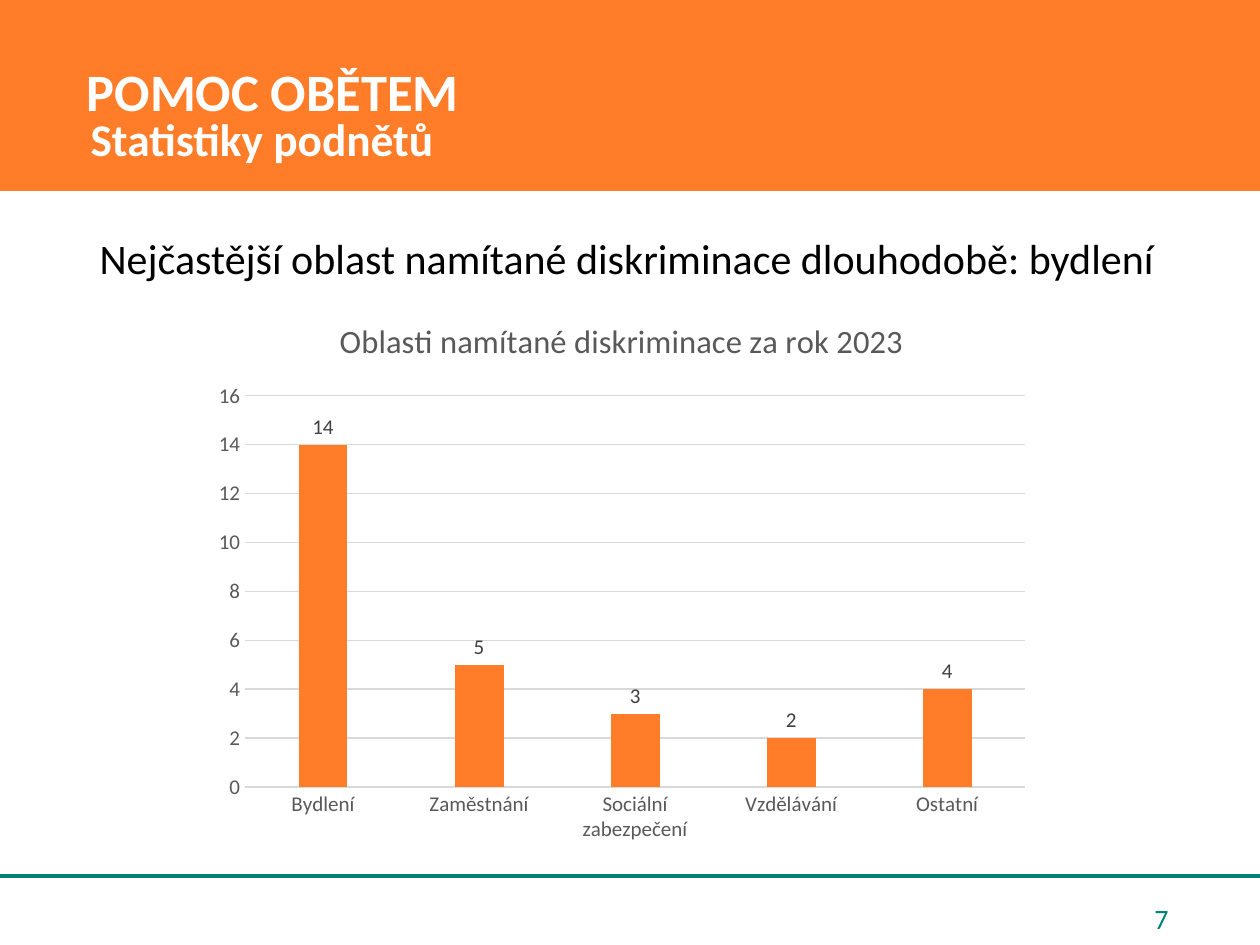
from lxml.etree import SubElement
from pptx import Presentation
from pptx.chart.data import CategoryChartData as ChartData
from pptx.dml.color import RGBColor as RGB
from pptx.enum.chart import XL_CHART_TYPE as Kind, XL_LABEL_POSITION as Spot
from pptx.enum.chart import XL_TICK_MARK as Tick
from pptx.enum.shapes import MSO_CONNECTOR as Conn, MSO_SHAPE as Shape
from pptx.enum.text import MSO_ANCHOR as Anchor, MSO_AUTO_SIZE as Fit, PP_ALIGN as Align
from pptx.oxml.ns import qn
from pptx.util import Emu, Pt

SCALE = 914400 / 126
FACE = "Calibri"
COLORS = {
    "orange": "FF7D28", "teal": "008276", "white": "FFFFFF", "black": "000000",
    "grey": "595959", "dark": "404040", "rule": "D9D9D9",
}


def px(*nums):
    return [Emu(round(n * SCALE)) for n in nums]


def tint(name):
    return RGB.from_string(COLORS[name])


class Deck:
    """Holds the style and the current slide."""

    def __init__(self, wide, high):
        self.prs = Presentation()
        self.prs.slide_width, self.prs.slide_height = px(wide, high)
        self.slide = self.prs.slides.add_slide(self.prs.slide_layouts[3])
        self.shapes = self.slide.shapes

    def font(self, font, size, color, bold=False):
        look = {"name": FACE, "size": Pt(size), "bold": bold}
        for key, value in look.items():
            setattr(font, key, value)
        font.color.rgb = tint(color)

    def stroke(self, line, color, width):
        line.color.rgb = tint(color)
        line.width = Pt(width)

    def band(self, box, color):
        """Draws a filled strip behind everything else."""
        band = self.shapes.add_shape(Shape.RECTANGLE, *px(*box))
        band.shadow.inherit = False
        band.fill.solid()
        band.fill.fore_color.rgb = tint(color)
        self.stroke(band.line, color, 1)
        self.shapes.element.insert(2, band.element)

    def rule(self, ends, color, width):
        rule = self.shapes.add_connector(Conn.STRAIGHT, *px(*ends))
        self.stroke(rule.line, color, width)
        SubElement(rule.element.spPr, qn("a:effectLst"))

    def text(self, shape, box, words, size, color, bold=False, indent=0,
             space=1.0, align=Align.LEFT, anchor=Anchor.TOP):
        shape.left, shape.top, shape.width, shape.height = px(*box)
        frame = shape.text_frame
        frame.text = words
        look = {"word_wrap": True, "auto_size": Fit.NONE, "vertical_anchor": anchor}
        for key, value in look.items():
            setattr(frame, key, value)
        par = frame.paragraphs[0]
        props = par._p.get_or_add_pPr()
        props.set("marL", str(px(indent)[0]))
        props.set("indent", "0")
        SubElement(props, qn("a:buNone"))
        look = {"alignment": align, "line_spacing": space, "space_before": Pt(0)}
        for key, value in look.items():
            setattr(par, key, value)
        self.font(par.runs[0].font, size, color, bold)

    def note(self, box, *args, **style):
        self.text(self.shapes.add_textbox(*px(*box)), box, *args, **style)

    def chart(self, box, title, rows, color):
        data = ChartData(number_format="0")
        data.categories = list(rows)
        data.add_series(title, list(rows.values()))
        chart = self.shapes.add_chart(Kind.COLUMN_CLUSTERED, *px(*box), data).chart
        self.font(chart.font, 10, "black")
        chart.has_legend = False
        chart.has_title = True
        frame = chart.chart_title.text_frame
        frame.text = title
        self.font(frame.paragraphs[0].runs[0].font, 18.6, "grey")
        chart.chart_title.include_in_layout = False

        cats, vals = chart.category_axis, chart.value_axis
        for axis in (cats, vals):
            axis.major_tick_mark = axis.minor_tick_mark = Tick.NONE
            self.font(axis.tick_labels.font, 12, "grey")
        self.stroke(cats.format.line, "rule", 0.75)
        vals.format.line.fill.background()
        self.stroke(vals.major_gridlines.format.line, "rule", 0.75)
        for key, value in {"minimum_scale": 0, "maximum_scale": 16, "major_unit": 2}.items():
            setattr(vals, key, value)

        plot = chart.plots[0]
        look = {"gap_width": 219, "overlap": -27, "vary_by_categories": False,
                "has_data_labels": True}
        for key, value in look.items():
            setattr(plot, key, value)
        labels = plot.data_labels
        labels.show_value = True
        labels.position = Spot.OUTSIDE_END
        self.font(labels.font, 12, "dark")
        fill = plot.series[0].format.fill
        fill.solid()
        fill.fore_color.rgb = tint(color)


def main():
    deck = Deck(1260, 945)
    title, sub, lead = deck.slide.placeholders
    deck.band((0, 0, 1265, 190), "orange")
    deck.rule((-4, 876, 1265, 876), "teal", 2.25)
    deck.text(title, (0, 0, 1260, 190), "POMOC OBĚTEM", 30, "white", bold=True,
              indent=74, space=0.9, anchor=Anchor.MIDDLE)
    deck.text(sub, (78, 120, 755, 55), "Statistiky podnětů", 25.9, "white",
              bold=True, space=0.7)
    deck.text(lead, (87, 232, 1095, 79),
              "Nejčastější oblast namítané diskriminace dlouhodobě: bydlení",
              24, "black", space=0.9)
    deck.chart((202, 294, 840, 559), "Oblasti namítané diskriminace za rok 2023",
               {"Bydlení": 14, "Zaměstnání": 5, "Sociální zabezpečení": 3,
                "Vzdělávání": 2, "Ostatní": 4}, "orange")
    deck.note((892, 893, 289, 50), "7", 16, "teal", align=Align.RIGHT,
              anchor=Anchor.MIDDLE)
    deck.prs.save("out.pptx")


if __name__ == "__main__":
    main()
